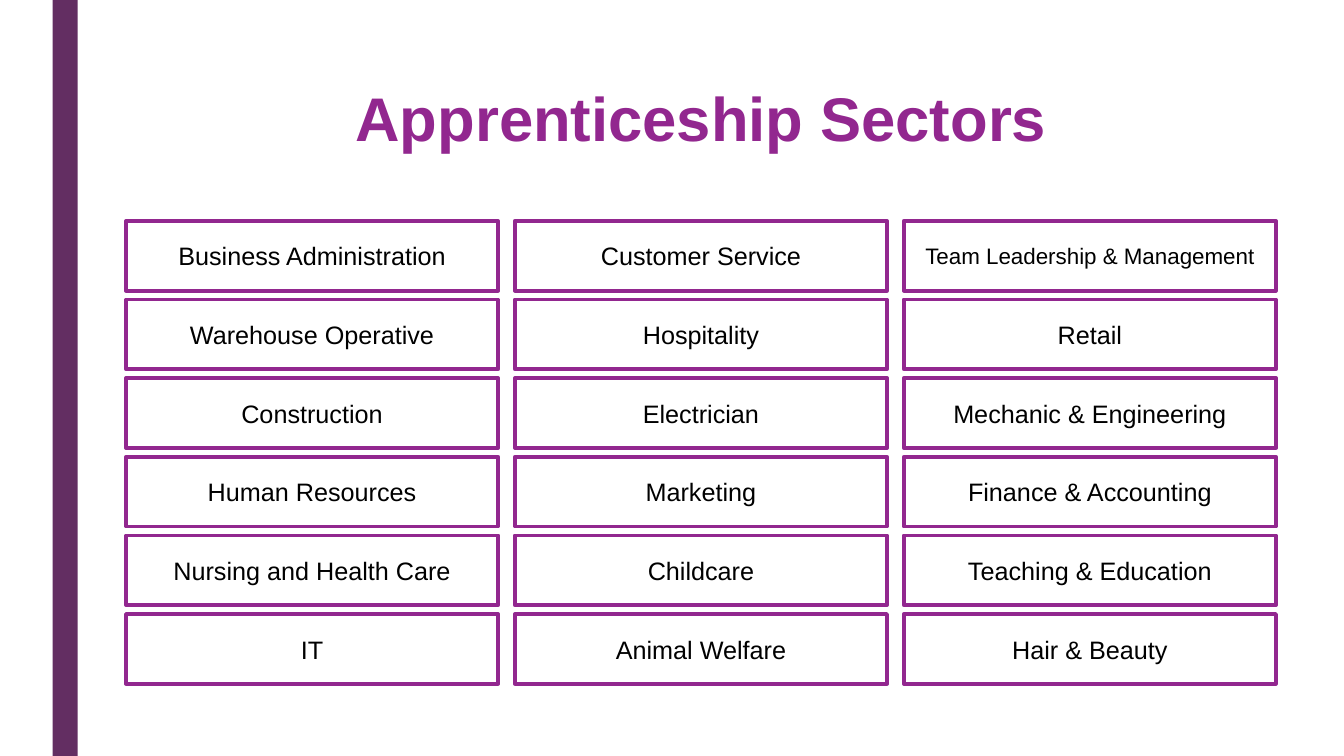
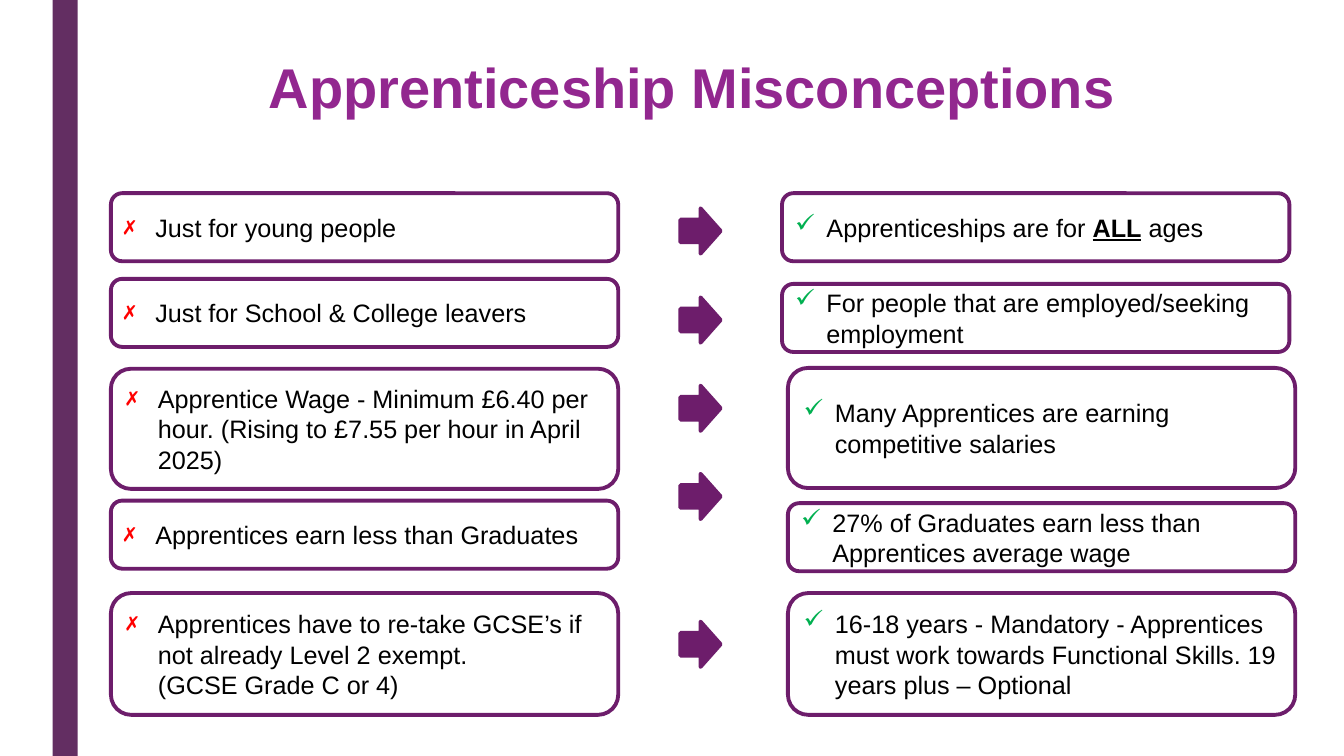
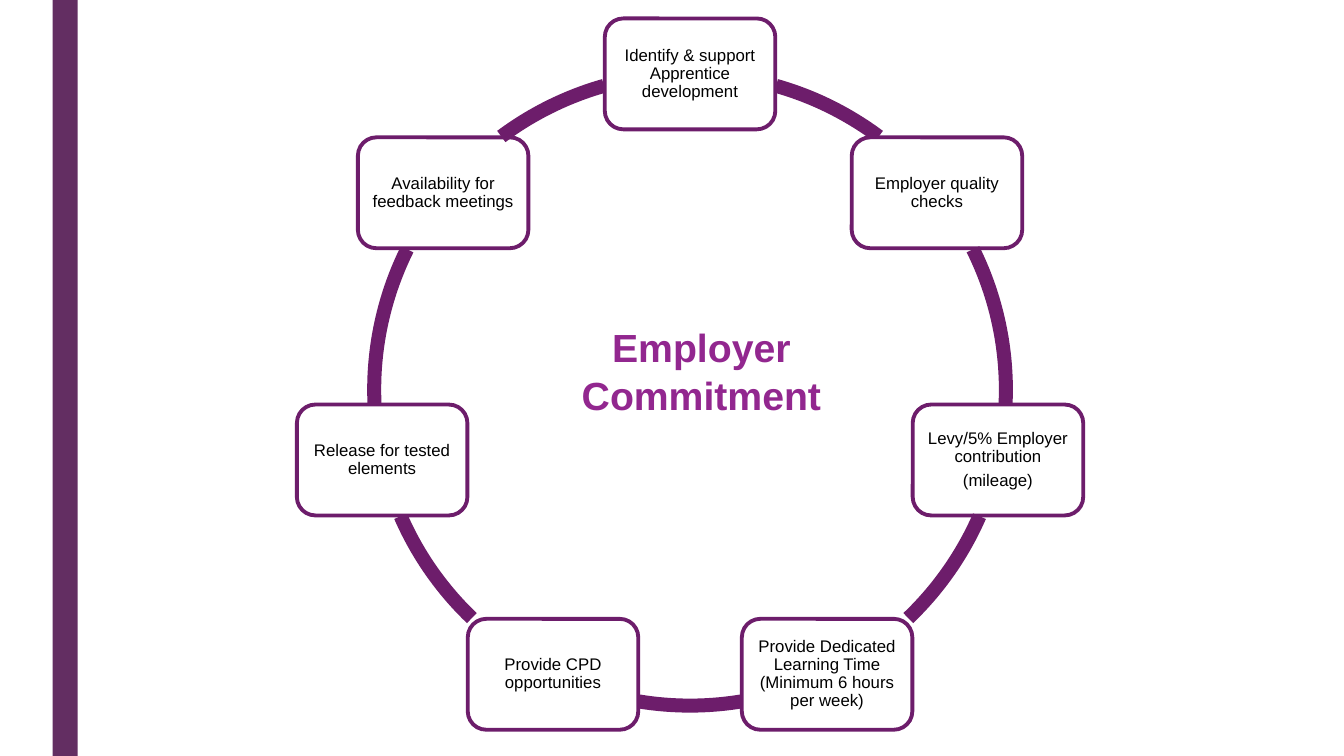
from dataclasses import dataclass
from math import cos, radians, sin

from lxml import etree
from pptx import Presentation
from pptx.dml.color import RGBColor
from pptx.enum.shapes import MSO_SHAPE
from pptx.enum.text import MSO_ANCHOR, PP_ALIGN
from pptx.oxml.ns import qn
from pptx.util import Inches, Pt

RECTANGLE = MSO_SHAPE.RECTANGLE
ROUNDED = MSO_SHAPE.ROUNDED_RECTANGLE
ALTERNATE_PROCESS = MSO_SHAPE.FLOWCHART_ALTERNATE_PROCESS
RIGHT_ARROW = MSO_SHAPE.RIGHT_ARROW
ARC = MSO_SHAPE.ARC
LEFT, CENTER = PP_ALIGN.LEFT, PP_ALIGN.CENTER
MIDDLE = MSO_ANCHOR.MIDDLE

# The slide is a grid of 160 columns by 90 rows of square cells.
COLUMNS, ROWS = 160, 90
CELL = Inches(7.5) // ROWS


@dataclass(frozen=True)
class Theme:
    font: str = "Arial"
    white: str = "FFFFFF"
    text: str = "000000"
    accent: str = "92278F"
    dark: str = "6D1D6B"
    band: str = "632E62"
    wrong: str = "FF0000"
    right: str = "00B050"
    title_size: int = 44
    subtitle_size: int = 40
    center_size: int = 28
    body_size: int = 18
    compact_size: int = 16
    small_size: int = 12
    outline: float = 2.75
    arc_width: int = 10


def cells(*lengths):
    return [round(length * CELL) for length in lengths]


class Deck:
    """Holds the theme, the presentation and the slide being filled."""

    def __init__(self, theme):
        self.theme = theme
        self.presentation = Presentation()
        self.presentation.slide_width, self.presentation.slide_height = cells(COLUMNS, ROWS)
        self.slide = None

    def new_slide(self):
        self.slide = self.presentation.slides.add_slide(self.presentation.slide_layouts[6])
        self.shape(RECTANGLE, (6.25, 0, 3, ROWS), self.theme.band)

    def shape(self, kind, area, fill=None, line=None, width=None):
        shape = self.slide.shapes.add_shape(kind, *cells(*area))
        shape.shadow.inherit = False
        if fill:
            shape.fill.solid()
            shape.fill.fore_color.rgb = RGBColor.from_string(fill)
        else:
            shape.fill.background()
        if line:
            shape.line.color.rgb = RGBColor.from_string(line)
            shape.line.width = Pt(width or self.theme.outline)
        else:
            shape.line.fill.background()
        return shape

    def title(self, text, area, size):
        frame = self.slide.shapes.add_textbox(*cells(*area)).text_frame
        frame.word_wrap = True
        frame.vertical_anchor = MIDDLE
        self.add_text(frame.paragraphs[0], text, size, color=self.theme.accent, bold=True)

    def box(self, kind, area, line):
        """Draw a white outlined box and return its text frame."""
        frame = self.shape(kind, area, self.theme.white, line).text_frame
        frame.word_wrap = True
        frame.vertical_anchor = MIDDLE
        return frame

    def add_text(self, paragraph, text, size, align=CENTER, color=None, bold=False):
        """Add text; parts between asterisks are bold and underlined."""
        paragraph.alignment = align
        for index, part in enumerate(text.split("*")):
            emphasis = index % 2 == 1
            for line_index, line in enumerate(part.split("\n")):
                if line_index:
                    paragraph.add_line_break()
                run = paragraph.add_run()
                run.text = line
                font = run.font
                font.name, font.size = self.theme.font, Pt(size)
                font.bold, font.underline = bold or emphasis, emphasis
                font.color.rgb = RGBColor.from_string(color or self.theme.text)

    def sector(self, text, area, size):
        frame = self.box(RECTANGLE, area, self.theme.accent)
        self.add_text(frame.paragraphs[0], text, size)

    def statement(self, text, area, mark, mark_color):
        paragraph = self.box(ALTERNATE_PROCESS, area, self.theme.dark).paragraphs[0]
        properties = paragraph._p.get_or_add_pPr()
        indent = Inches(0.31)
        properties.set("marL", str(indent))
        properties.set("indent", str(-indent))
        bullet_color = etree.SubElement(properties, qn("a:buClr"))
        etree.SubElement(bullet_color, qn("a:srgbClr")).set("val", mark_color)
        etree.SubElement(properties, qn("a:buChar")).set("char", mark)
        self.add_text(paragraph, text, self.theme.body_size, LEFT)

    def arrow(self, area):
        self.shape(RIGHT_ARROW, area, self.theme.dark, self.theme.dark)

    def commitment(self, texts, area):
        frame = self.box(ROUNDED, area, self.theme.dark)
        frame.margin_left = frame.margin_right = Inches(0.05)
        for index, text in enumerate(texts):
            paragraph = frame.add_paragraph() if index else frame.paragraphs[0]
            paragraph.line_spacing = 0.9
            paragraph.space_after = Pt(4.2)
            self.add_text(paragraph, text, self.theme.small_size)

    def arc(self, area, start, end):
        """Draw part of a circle, clockwise between two angles in degrees."""
        arc = self.shape(ARC, area, line=self.theme.dark, width=self.theme.arc_width)
        for index, angle in enumerate((start, end)):
            arc.adjustments[index] = angle * 0.6


SECTORS = [
    ["Business Administration", "Customer Service", "Team Leadership & Management"],
    ["Warehouse Operative", "Hospitality", "Retail"],
    ["Construction", "Electrician", "Mechanic & Engineering"],
    ["Human Resources", "Marketing", "Finance & Accounting"],
    ["Nursing and Health Care", "Childcare", "Teaching & Education"],
    ["IT", "Animal Welfare", "Hair & Beauty"],
]

# Myth, its top, fact, its left and top, height of both, top of the arrow
MISCONCEPTIONS = [
    ("Just for young people", 23,
     "Apprenticeships are for *ALL* ages", 93.1, 23, 8.1, 24.8),
    ("Just for School & College leavers", 33.2,
     "For people that are employed/seeking employment", 93.1, 33.8, 8.1, 35.4),
    ("Apprentice Wage - Minimum £6.40 per hour. (Rising to £7.55 per hour in April 2025)", 43.9,
     "Many Apprentices are earning competitive salaries", 93.8, 43.8, 14.3, 45.9),
    ("Apprentices earn less than Graduates", 59.6,
     "27% of Graduates earn less than Apprentices average wage", 93.8, 59.9, 8.1, 56.4),
    ("Apprentices have to re-take GCSE’s if not already Level 2 exempt.\n(GCSE Grade C or 4)", 70.6,
     "16-18 years - Mandatory - Apprentices must work towards Functional Skills. "
     "19 years plus – Optional", 93.8, 70.6, 14.5, 74),
]

COMMITMENTS = [
    ["Identify & support Apprentice development"],
    ["Employer quality checks"],
    ["Levy/5% Employer contribution", "(mileage)"],
    ["Provide Dedicated Learning Time (Minimum 6 hours per week)"],
    ["Provide CPD opportunities"],
    ["Release for tested elements"],
    ["Availability for feedback meetings"],
]


def sectors_slide(deck):
    deck.new_slide()
    deck.title("Apprenticeship Sectors", (26.3, 4.9, 114.4, 18.1), deck.theme.title_size)
    for row, names in enumerate(SECTORS):
        for column, name in enumerate(names):
            size = deck.theme.compact_size if len(name) > 25 else deck.theme.body_size
            deck.sector(name, (15 + 46.3 * column, 26.3 + 9.36 * row, 44.3, 8.3), size)


def misconceptions_slide(deck):
    deck.new_slide()
    theme = deck.theme
    deck.title("Apprenticeship Misconceptions", (26, 5.6, 112.7, 9.2), theme.subtitle_size)
    width = 60.4
    for myth, myth_top, fact, fact_left, fact_top, height, arrow_top in MISCONCEPTIONS:
        deck.statement(myth, (13.2, myth_top, width, height), "✗", theme.wrong)
        deck.arrow((81, arrow_top, 4.8, 5.4))
        deck.statement(fact, (fact_left, fact_top, width, height), "✓", theme.right)


def commitment_slide(deck):
    deck.new_slide()
    center_x, center_y, radius = 82.15, 46.4, 37.6
    width, height = 20.3, 13.2
    ring = (center_x - radius, center_y - radius, 2 * radius, 2 * radius)
    right_arcs = [(285.8, 306.7), (333.6, 2.5), (23.6, 46.3)]
    left_arcs = [((180 - end) % 360, (180 - start) % 360) for start, end in reversed(right_arcs)]
    arcs = right_arcs + [(80.7, 99.3)] + left_arcs
    for index, (texts, arc) in enumerate(zip(COMMITMENTS, arcs)):
        angle = radians(360 / len(COMMITMENTS) * index - 90)
        left = center_x + radius * cos(angle) - width / 2
        top = center_y + radius * sin(angle) - height / 2
        deck.commitment(texts, (left, top, width, height))
        deck.arc(ring, *arc)
    deck.title("Employer Commitment", (65.5, 37.9, 36, 12.5), deck.theme.center_size)


def main():
    deck = Deck(Theme())
    sectors_slide(deck)
    misconceptions_slide(deck)
    commitment_slide(deck)
    deck.presentation.save("out.pptx")


if __name__ == "__main__":
    main()
